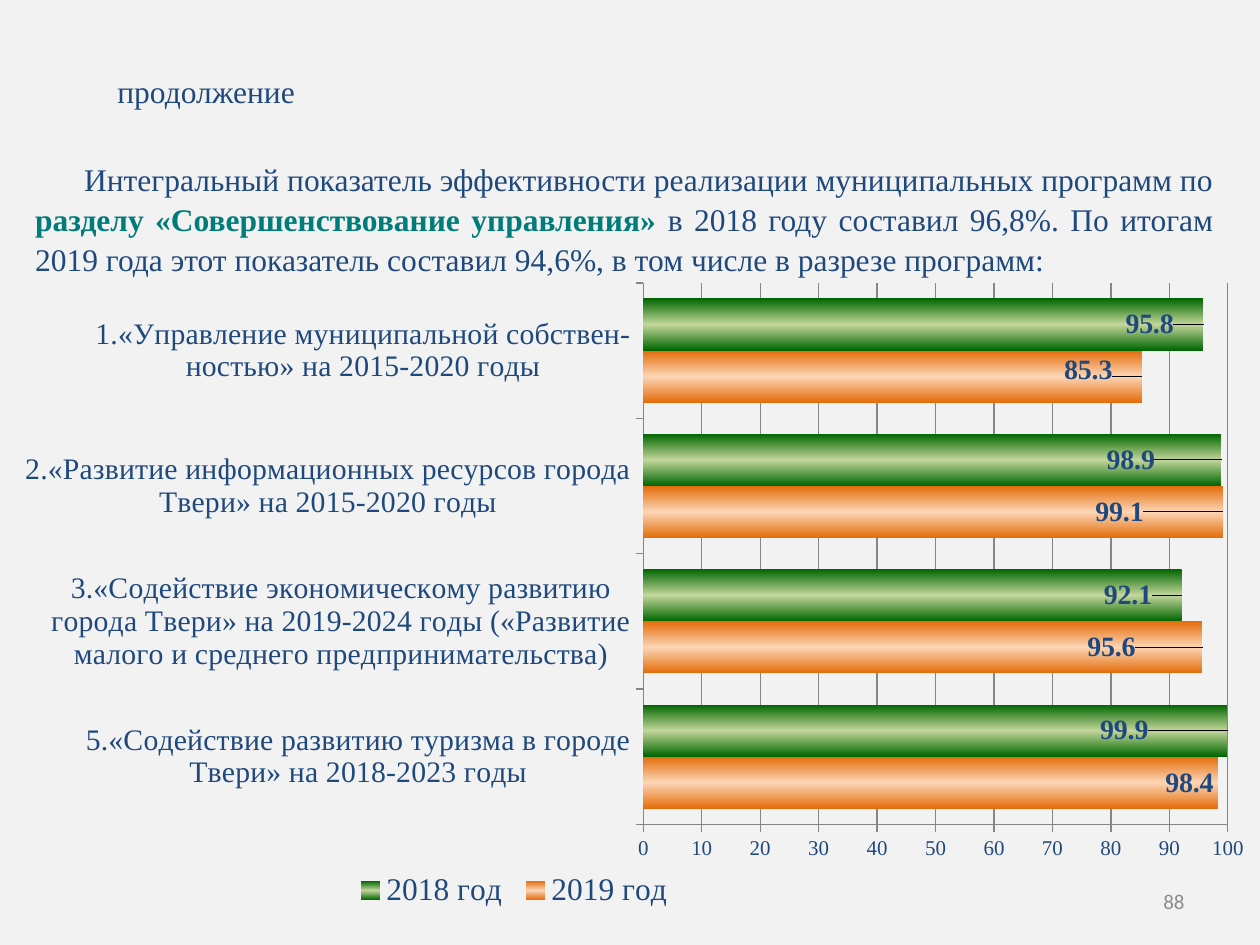
import copy

import pptx
import pptx.chart.data
import pptx.dml.color
import pptx.enum.chart
import pptx.enum.text
import pptx.oxml
import pptx.oxml.ns
import pptx.util

Pt = pptx.util.Pt
ALIGN = pptx.enum.text.PP_ALIGN

THEME = {
    "serif": "Times New Roman", "sans": "Calibri",
    "background": "F2F2F2", "navy": "1F497D", "teal": "007D7A",
    "gray": "8C8C8C", "grid": "868686",
    "body": 18, "category": 17, "label": 16, "small": 12,
}

# Each text: box (left, top, width, height), paragraph format, spans
TEXTS = [
    {"box": (516, 500.4, 168, 28.8), "font": "sans", "size": "small",
     "paragraph": {"alignment": ALIGN.RIGHT},
     "anchor": pptx.enum.text.MSO_ANCHOR.MIDDLE,
     "spans": [("88", "gray", False)]},
    {"box": (13, 87, 687.6, 73), "font": "serif", "size": "body",
     "paragraph": {"alignment": ALIGN.JUSTIFY, "line_spacing": 1.05},
     "indent": 28,
     "spans": [
         ("Интегральный показатель эффективности реализации муниципальных "
          "программ по ", "navy", False),
         ("разделу «Совершенствование управления» ", "teal", True),
         ("в 2018 году составил 96,8%. По итогам 2019 года этот показатель "
          "составил 94,6%, в том числе в разрезе программ:", "navy", False)]},
    {"box": (60, 37.5, 175.7, 29), "font": "serif", "size": "body",
     "paragraph": {"alignment": ALIGN.LEFT},
     "spans": [("продолжение", "navy", False)]},
]

CHART_BOX = (14.4, 151.2, 705.6, 388.8)
PLOT_LAYOUT = {"x": 0.5, "y": 0.03, "w": 0.47, "h": 0.8}
PLOT_LAYOUT = {"x": 0.5, "y": 0.027, "w": 0.474, "h": 0.796}
LEGEND_LAYOUT = {"x": 0.26, "y": 0.89, "w": 0.27, "h": 0.06}
CATEGORIES = [
    "5.«Содействие развитию туризма в городе Твери» на 2018-2023 годы",
    "3.«Содействие экономическому развитию города Твери» на 2019-2024 годы "
    "(«Развитие малого и среднего предпринимательства)",
    "2.«Развитие информационных ресурсов города Твери» на 2015-2020 годы",
    "1.«Управление муниципальной собствен- ностью» на 2015-2020 годы",
]
# Label shifts are fractions of the chart, from the inside end of each bar
SERIES = [
    {"name": "2019 год", "values": (98.4, 95.6, 99.1, 85.3),
     "edge": "E46C0A", "middle": "FCD5B5",
     "shifts": ((0, 0), (-0.05, 0), (-0.06, 0), (-0.02, -0.01))},
    {"name": "2018 год", "values": (99.9, 92.1, 98.9, 95.8),
     "edge": "006600", "middle": "C3D69B",
     "shifts": ((-0.06, 0), (-0.02, 0), (-0.05, 0), (-0.02, 0))},
]


def rgb(value):
    return pptx.dml.color.RGBColor.from_string(THEME.get(value, value))


def set_all(target, values):
    for name, value in values.items():
        setattr(target, name, value)


def set_font(font, size, color, face="serif", bold=False):
    set_all(font, {"name": THEME[face], "size": Pt(THEME[size]), "bold": bold})
    font.color.rgb = rgb(color)


def manual_layout(values, modes):
    """Return a c:layout element; modes are settings written before the values."""
    settings = {**modes, **values}
    body = "".join(f'<c:{tag} val="{value}"/>' for tag, value in settings.items())
    return pptx.oxml.parse_xml(
        f'<c:layout {pptx.oxml.ns.nsdecls("c")}>'
        f"<c:manualLayout>{body}</c:manualLayout></c:layout>")


def replace_layout(parent, layout, before):
    """Put the layout where the schema wants it: ahead of the `before` element."""
    for old in parent.xpath("./c:layout"):
        parent.remove(old)
    parent.xpath(f"./c:{before}")[0].addprevious(layout)


def add_text(slide, text):
    box = slide.shapes.add_textbox(*map(Pt, text["box"]))
    frame = box.text_frame
    frame.word_wrap = True
    if "anchor" in text:
        frame.vertical_anchor = text["anchor"]
    para = frame.paragraphs[0]
    set_all(para, text["paragraph"])
    if "indent" in text:
        para._p.get_or_add_pPr().set("indent", str(Pt(text["indent"])))
    for words, color, bold in text["spans"]:
        span = para.add_run()
        span.text = words
        set_font(span.font, text["size"], color, text["font"], bold)


def fill_bars(series, edge, middle):
    """Give the bars a three-stop gradient running across their thickness."""
    fill = series.format.fill
    fill.gradient()
    fill.gradient_angle = 270
    stop_list = series._element.xpath("./c:spPr/a:gradFill/a:gsLst")[0]
    stop_list.append(copy.deepcopy(stop_list[-1]))
    for stop, position, color in zip(fill.gradient_stops, (0, 0.5, 1),
                                     (edge, middle, edge)):
        stop.position = position
        stop.color.rgb = rgb(color)


def label_bars(series, shifts):
    for index, (x, y) in enumerate(shifts):
        label = series.points[index].data_label
        set_font(label.font, "label", "navy", bold=True)
        label.position = pptx.enum.chart.XL_LABEL_POSITION.INSIDE_END
        if x or y:
            element = series._element.xpath(
                f"./c:dLbls/c:dLbl[c:idx/@val='{index}']")[0]
            element.xpath("./c:idx")[0].addnext(manual_layout({"x": x, "y": y}, {}))


def style_axes(chart):
    for axis, size in ((chart.category_axis, "category"),
                       (chart.value_axis, "small")):
        set_font(axis.tick_labels.font, size, "navy")
        axis.major_tick_mark = pptx.enum.chart.XL_TICK_MARK.OUTSIDE
        axis.format.line.color.rgb = rgb("grid")
    set_all(chart.value_axis, {"minimum_scale": 0, "maximum_scale": 100,
                               "major_unit": 10, "has_major_gridlines": True})
    chart.value_axis.major_gridlines.format.line.color.rgb = rgb("grid")
    set_all(chart.value_axis.tick_labels,
            {"number_format": "0", "number_format_is_linked": False})


def add_program_chart(slide):
    data = pptx.chart.data.CategoryChartData()
    data.categories = CATEGORIES
    for row in SERIES:
        data.add_series(row["name"], row["values"])
    chart = slide.shapes.add_chart(pptx.enum.chart.XL_CHART_TYPE.BAR_CLUSTERED,
                                   *map(Pt, CHART_BOX), data).chart
    set_all(chart, {"has_title": False, "has_legend": True})
    set_font(chart.font, "label", "navy")
    style_axes(chart)

    plot = chart.plots[0]
    set_all(plot, {"gap_width": 60, "overlap": 0, "vary_by_categories": False})
    for series, row in zip(plot.series, SERIES):
        fill_bars(series, row["edge"], row["middle"])
        label_bars(series, row["shifts"])

    legend = chart.legend
    set_all(legend, {"position": pptx.enum.chart.XL_LEGEND_POSITION.BOTTOM,
                     "include_in_layout": False})
    set_font(legend.font, "body", "navy")
    edges = {"xMode": "edge", "yMode": "edge"}
    replace_layout(legend._element, manual_layout(LEGEND_LAYOUT, edges), "overlay")
    plot_area = chart._chartSpace.xpath("./c:chart/c:plotArea")[0]
    replace_layout(plot_area, manual_layout(
        PLOT_LAYOUT, {"layoutTarget": "inner", **edges}), "barChart")


def main():
    deck = pptx.Presentation()
    set_all(deck, {"slide_width": Pt(720), "slide_height": Pt(540)})
    slide = deck.slides.add_slide(deck.slide_layouts[6])
    slide.background.fill.solid()
    slide.background.fill.fore_color.rgb = rgb("background")
    add_program_chart(slide)
    for text in TEXTS:
        add_text(slide, text)
    deck.save("out.pptx")


if __name__ == "__main__":
    main()
